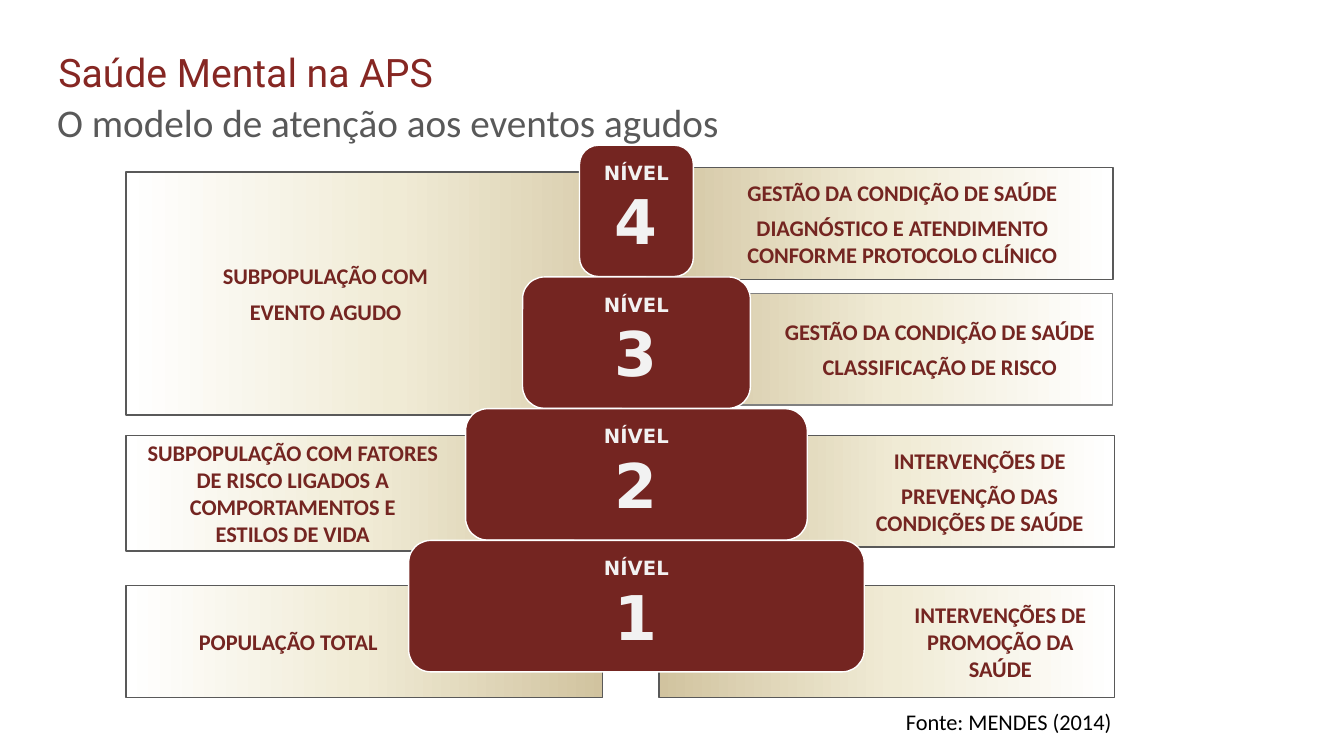
from lxml.etree import SubElement
from pptx import Presentation
from pptx.dml.color import RGBColor
from pptx.enum.shapes import MSO_SHAPE as Kind
from pptx.enum.text import MSO_ANCHOR as Anchor, PP_ALIGN as Align
from pptx.oxml.ns import qn
from pptx.util import Cm, Pt

HUES = {"wine": "742521", "title": "862723", "gray": "595959", "mid": "808080",
        "pale": "F2F2F2", "white": "FFFFFF", "black": "000000"}
FADE = [(0, "FFFFFF"), (49, "F0EBD5"), (100, "D1C39F")]

# Text styles
HEAD = {"name": "Roboto", "size": Pt(28), "hue": "title"}
SUB = {"name": "Calibri", "size": Pt(28), "hue": "gray"}
NOTE = {"name": "Calibri", "size": Pt(16), "hue": "black"}
BODY = {"name": "Calibri", "size": Pt(16), "bold": True, "hue": "wine"}
WORD = {"name": "DejaVu Sans", "size": Pt(14), "bold": True, "hue": "pale"}
DIGIT = {**WORD, "size": Pt(44)}

# Plain texts: left, top, width, height, anchor, line spacing, style, words
TEXTS = [
    (1.22, 1.09, 17.98, 1.45, Anchor.TOP, 1, HEAD, "Saúde Mental na APS"),
    (1.19, 1.3, 27.91, 3.68, Anchor.MIDDLE, 0.9, SUB,
     "O modelo de atenção aos eventos agudos"),
]
SOURCE = (22.58, 17.73, 5.82, 0.94, Anchor.TOP, 1, NOTE, "Fonte: MENDES (2014)")

# Left panels: top, width, height, lines as (words, space before in points)
GROUPS = [
    (4.34, 13.89, 6.12, [("SUBPOPULAÇÃO COM", 0), ("EVENTO AGUDO", 6)]),
    (10.97, 12.24, 2.92,
     [("SUBPOPULAÇÃO COM FATORES DE RISCO LIGADOS A COMPORTAMENTOS E", 0),
      ("ESTILOS DE VIDA", 0)]),
    (14.76, 12.01, 2.82, [("POPULAÇÃO TOTAL", 0)]),
]
# Right panels: left, top, width, line hue, lines
ACTIONS = [
    (16.21, 4.22, 11.84, "gray",
     [("GESTÃO DA CONDIÇÃO DE SAÚDE", 0),
      ("DIAGNÓSTICO E ATENDIMENTO CONFORME PROTOCOLO CLÍNICO", 6)]),
    (16.61, 7.39, 11.43, "mid",
     [("GESTÃO DA CONDIÇÃO DE SAÚDE", 0), ("CLASSIFICAÇÃO DE RISCO", 6)]),
    (17.07, 10.97, 11.02, "gray",
     [("INTERVENÇÕES DE", 0), ("PREVENÇÃO DAS", 6), ("CONDIÇÕES DE SAÚDE", 0)]),
    (16.61, 14.76, 11.48, "gray",
     [("INTERVENÇÕES DE", 0), ("PROMOÇÃO DA SAÚDE", 0)]),
]
LEVELS = [4, 3, 2, 1]

EDGE = 3.18          # left side of the left panels
ROW = 2.82           # height of the right panels
PAD, INNER = 0.25, 4.09
SHIFT, STEP = 1.22, 1.5   # text indent of the right panels, growing downwards
AXIS, PEAK = 16.04, 3.66  # centre line and top of the pyramid
UNIT, TALL, PITCH = 2.87, 3.31, 3.32


def tint(name):
    return RGBColor.from_string(HUES[name])


def style(font, look):
    for key, val in look.items():
        if key == "hue":
            font.color.rgb = tint(val)
        else:
            setattr(font, key, val)


def write(frame, lines, **form):
    """Fill a frame with (words, style, paragraph format) lines."""
    frame.word_wrap = True
    for key, val in form.items():
        setattr(frame, key, val)
    for i, (words, look, para) in enumerate(lines):
        par = frame.add_paragraph() if i else frame.paragraphs[0]
        for key, val in para.items():
            setattr(par, key, val)
        run = par.add_run()
        run.text = words
        style(run.font, look)


def label(slide, item):
    *box, anchor, space, look, words = item
    frame = slide.shapes.add_textbox(*map(Cm, box)).text_frame
    write(frame, [(words, look, {"line_spacing": space})], vertical_anchor=anchor)


def block(slide, kind, box, line):
    shape = slide.shapes.add_shape(kind, *map(Cm, box))
    shape.shadow.inherit = False
    shape.line.color.rgb = tint(line)
    shape.line.width = Pt(1)
    return shape


def panel(slide, box, line, angle, lines, left, right):
    """Draw a faded box with centred lines between two side margins."""
    shape = block(slide, Kind.RECTANGLE, box, line)
    shape.fill.gradient()
    shape.fill.gradient_angle = angle
    stops = shape._element.spPr.find(qn("a:gradFill")).find(qn("a:gsLst"))
    for old in list(stops):
        stops.remove(old)
    for pos, hue in FADE:
        stop = SubElement(stops, qn("a:gs"), pos=str(pos * 1000))
        SubElement(stop, qn("a:srgbClr"), val=hue)
    rows = [(words, BODY, {"alignment": Align.CENTER, "space_before": Pt(gap)})
            for words, gap in lines]
    write(shape.text_frame, rows, vertical_anchor=Anchor.MIDDLE,
          margin_left=Cm(left), margin_right=Cm(right))


def level(slide, i, num):
    wide = UNIT * (i + 1)
    box = (AXIS - wide / 2, PEAK + PITCH * i, wide, TALL)
    shape = block(slide, Kind.ROUNDED_RECTANGLE, box, "white")
    shape.fill.solid()
    shape.fill.fore_color.rgb = tint("wine")
    para = {"alignment": Align.CENTER, "line_spacing": 0.9}
    write(shape.text_frame,
          [("NÍVEL", WORD, {**para, "space_after": Pt(5)}), (str(num), DIGIT, para)],
          vertical_anchor=Anchor.MIDDLE, margin_left=0, margin_right=0,
          margin_top=0, margin_bottom=0)


def main():
    deck = Presentation()
    deck.slide_width, deck.slide_height = Cm(33.87), Cm(19.05)
    slide = deck.slides.add_slide(deck.slide_layouts[6])
    for item in TEXTS:
        label(slide, item)
    for top, wide, high, lines in GROUPS:
        panel(slide, (EDGE, top, wide, high), "gray", 0, lines, PAD, INNER)
    for i, (left, top, wide, line, lines) in enumerate(ACTIONS):
        panel(slide, (left, top, wide, ROW), line, 180, lines,
              PAD + SHIFT + STEP * i, PAD)
    for i, num in enumerate(LEVELS):
        level(slide, i, num)
    label(slide, SOURCE)
    deck.save("out.pptx")


if __name__ == "__main__":
    main()
